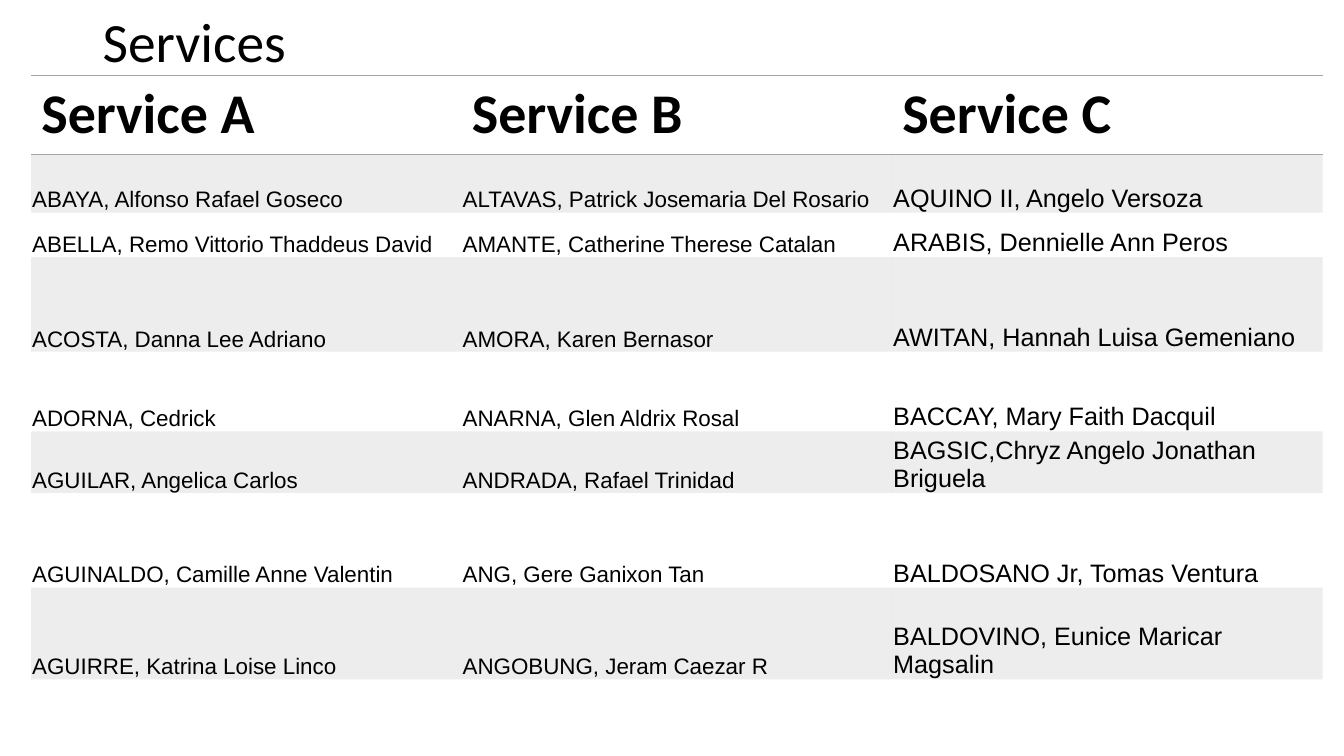
from lxml import etree
from pptx import Presentation
from pptx.dml.color import RGBColor
from pptx.enum.text import MSO_ANCHOR
from pptx.oxml.ns import qn
from pptx.util import Inches, Pt

MIDDLE, BOTTOM, TOP = MSO_ANCHOR.MIDDLE, MSO_ANCHOR.BOTTOM, MSO_ANCHOR.TOP

TITLE = "Services"
HEADINGS = ["Service A", "Service B", "Service C"]
# Row height in inches, then one name per service
MEMBERS = [
    (0.58, "ABAYA, Alfonso Rafael Goseco", "ALTAVAS, Patrick Josemaria Del Rosario",
     "AQUINO II, Angelo Versoza"),
    (0.44, "ABELLA, Remo Vittorio Thaddeus David", "AMANTE, Catherine Therese Catalan",
     "ARABIS, Dennielle Ann Peros"),
    (0.94, "ACOSTA, Danna Lee Adriano", "AMORA, Karen Bernasor",
     "AWITAN, Hannah Luisa Gemeniano"),
    (0.79, "ADORNA, Cedrick", "ANARNA, Glen Aldrix Rosal",
     "BACCAY, Mary Faith Dacquil"),
    (0.58, "AGUILAR, Angelica Carlos", "ANDRADA, Rafael Trinidad",
     "BAGSIC,Chryz Angelo Jonathan Briguela"),
    (0.94, "AGUINALDO, Camille Anne Valentin", "ANG, Gere Ganixon Tan",
     "BALDOSANO Jr, Tomas Ventura"),
    (0.91, "AGUIRRE, Katrina Loise Linco", "ANGOBUNG, Jeram Caezar R",
     "BALDOVINO, Eunice Maricar Magsalin"),
]
MEMBER_SIZES = [16, 16, 18]
HEADING_HEIGHT, LAST_HEIGHT = 0.78, 0.66
COLUMN_WIDTH = 4.27
COLORS = {"text": "000000", "gray": "A5A5A5"}
BAND_OPACITY = 20
PLAIN_STYLE = "{2D5ABB26-0587-4C30-8999-92F81FD0307C}"


def add_text(para, text, size, font, bold=False):
    span = para.add_run()
    span.text = text
    span.font.size = Pt(size)
    span.font.name = font
    span.font.bold = bold
    span.font.color.rgb = RGBColor.from_string(COLORS["text"])


def shade(cell):
    """Fill a cell with the translucent band colour."""
    cell.fill.solid()
    cell.fill.fore_color.rgb = RGBColor.from_string(COLORS["gray"])
    color = cell._tc.tcPr.find(".//" + qn("a:srgbClr"))
    etree.SubElement(color, qn("a:alpha"), val=str(BAND_OPACITY * 1000))


def rule_cell(cell):
    """Draw thin lines above and below a cell."""
    properties = cell._tc.get_or_add_tcPr()
    for position, side in enumerate(["a:lnT", "a:lnB"]):
        line = etree.Element(qn(side), w=str(Pt(1)))
        fill = etree.SubElement(line, qn("a:solidFill"))
        etree.SubElement(fill, qn("a:srgbClr"), val=COLORS["gray"])
        properties.insert(position, line)


def add_title(page):
    box = page.shapes.add_textbox(Inches(0.92), Inches(0.12), Inches(11.5), Inches(0.64))
    frame = box.text_frame
    frame.word_wrap = True
    frame.vertical_anchor = MIDDLE
    para = frame.paragraphs[0]
    para.line_spacing = 0.9
    add_text(para, TITLE, 39.6, "Calibri")


def add_services(page):
    heights = [HEADING_HEIGHT] + [height for height, *_ in MEMBERS] + [LAST_HEIGHT]
    frame = page.shapes.add_table(
        len(heights), len(HEADINGS), Inches(0.31), Inches(0.75),
        Inches(COLUMN_WIDTH * len(HEADINGS)), Inches(sum(heights)))
    table = frame.table
    table.horz_banding = False
    table._tbl.tblPr.find(qn("a:tableStyleId")).text = PLAIN_STYLE
    for row, height in zip(table.rows, heights):
        row.height = Inches(height)
    for column, heading in enumerate(HEADINGS):
        table.columns[column].width = Inches(COLUMN_WIDTH)
        cell = table.cell(0, column)
        cell.vertical_anchor = TOP
        add_text(cell.text_frame.paragraphs[0], heading, 40, "Calibri", True)
        rule_cell(cell)
    for index, (_, *names) in enumerate(MEMBERS):
        for column, (name, size) in enumerate(zip(names, MEMBER_SIZES)):
            cell = table.cell(index + 1, column)
            cell.margin_left = cell.margin_right = cell.margin_top = Inches(0.01)
            cell.margin_bottom = 0
            cell.vertical_anchor = BOTTOM
            add_text(cell.text_frame.paragraphs[0], name, size, "Arial")
            if index % 2 == 0:
                shade(cell)


def main():
    deck = Presentation()
    deck.slide_width, deck.slide_height = Inches(13.33), Inches(7.5)
    page = deck.slides.add_slide(deck.slide_layouts[6])
    add_title(page)
    add_services(page)
    deck.save("out.pptx")


if __name__ == "__main__":
    main()
